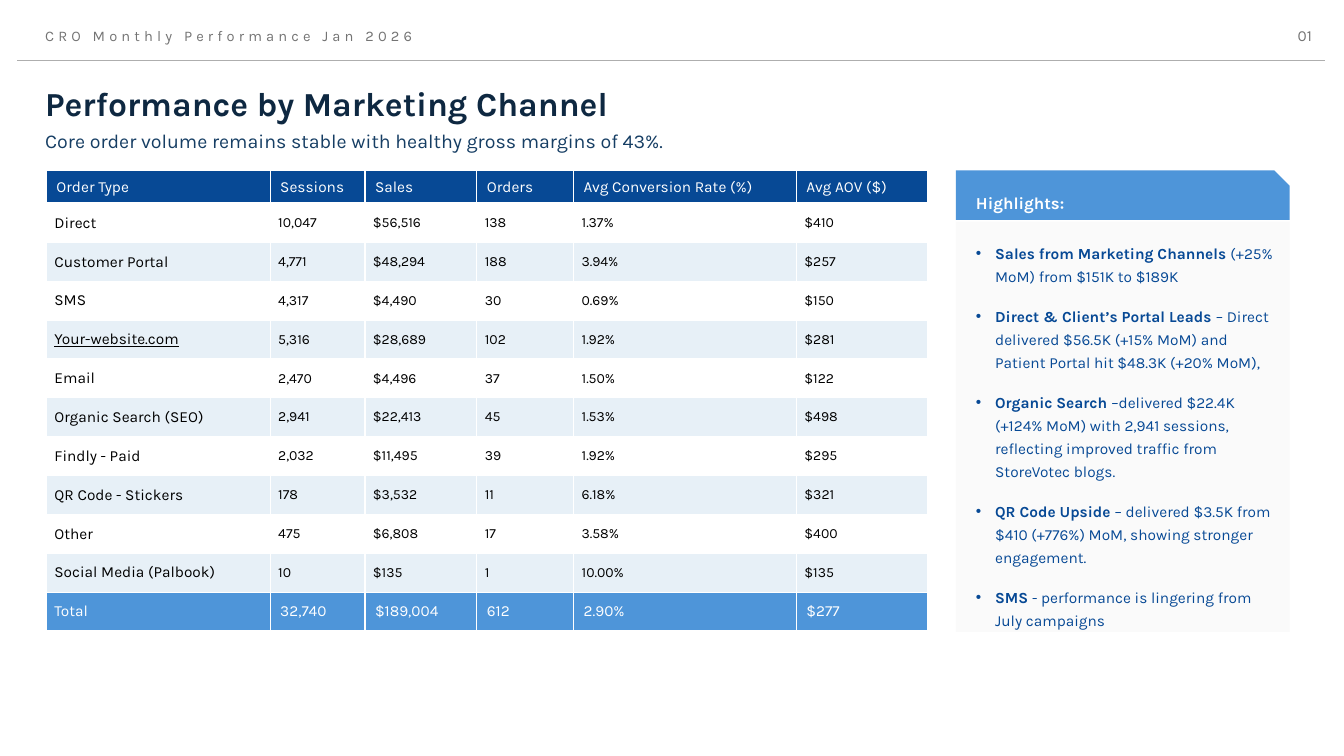
from lxml import etree
from pptx import Presentation
from pptx import util as u
from pptx.dml.color import RGBColor
from pptx.enum import shapes, text
from pptx.oxml.ns import qn

COLORS = {
    "white": "FFFFFF", "black": "000000", "navy": "0E2841", "slate": "163E64",
    "gray": "747474", "rule": "AEAEAE", "blue": "074995", "sky": "4E95D9",
    "band": "E7F0F7", "panel": "FAFAFA",
}

CHANNELS = [
    ("Order Type", "Sessions", "Sales", "Orders", "Avg Conversion Rate (%)", "Avg AOV ($)"),
    ("Direct", "10,047", "$56,516", "138", "1.37%", "$410"),
    ("Customer Portal", "4,771", "$48,294", "188", "3.94%", "$257"),
    ("SMS", "4,317", "$4,490", "30", "0.69%", "$150"),
    ("Your-website.com", "5,316", "$28,689", "102", "1.92%", "$281"),
    ("Email", "2,470", "$4,496", "37", "1.50%", "$122"),
    ("Organic Search (SEO)", "2,941", "$22,413", "45", "1.53%", "$498"),
    ("Findly - Paid", "2,032", "$11,495", "39", "1.92%", "$295"),
    ("QR Code - Stickers", "178", "$3,532", "11", "6.18%", "$321"),
    ("Other", "475", "$6,808", "17", "3.58%", "$400"),
    ("Social Media (Palbook)", "10", "$135", "1", "10.00%", "$135"),
    ("Total", "32,740", "$189,004", "612", "2.90%", "$277"),
]

HIGHLIGHTS = [
    ("Sales from Marketing Channels ", "(+25% MoM) from $151K to $189K"),
    ("Direct & Client’s Portal Leads ",
     "– Direct delivered $56.5K (+15% MoM) and Patient Portal hit $48.3K (+20% MoM),"),
    ("Organic Search ",
     "–delivered $22.4K (+124% MoM) with 2,941 sessions, "
     "reflecting improved traffic from StoreVotec blogs."),
    ("QR Code Upside ",
     "– delivered $3.5K from $410 (+776%) MoM, showing stronger engagement."),
    ("SMS", " - performance is lingering from July campaigns"),
]


def rgb(name):
    return RGBColor.from_string(COLORS[name])


class SlideBuilder:
    font = "Karla"

    def __init__(self, slide):
        self.slide = slide

    def run(self, paragraph, content, size, color, bold=False, underline=False, tracking=0):
        run = paragraph.add_run()
        run.text = content
        run.font.name = self.font
        run.font.size = u.Pt(size)
        run.font.bold = bold
        run.font.color.rgb = rgb(color)
        if underline:
            run.font.underline = True
        if tracking:
            run.font._element.set("spc", str(tracking * 100))

    def text_box(self, box, content, size, color, anchor=text.MSO_ANCHOR.BOTTOM,
                 align=text.PP_ALIGN.LEFT, spacing=0.9, **style):
        shape = self.slide.shapes.add_textbox(*map(u.Inches, box))
        frame = shape.text_frame
        frame.word_wrap = True
        frame.vertical_anchor = anchor
        paragraph = frame.paragraphs[0]
        paragraph.alignment = align
        paragraph.line_spacing = spacing
        self.run(paragraph, content, size, color, **style)

    def rule(self, start, end):
        line = self.slide.shapes.add_connector(
            shapes.MSO_CONNECTOR.STRAIGHT, *map(u.Inches, start + end))
        line.line.color.rgb = rgb("rule")
        line.line.width = u.Pt(0.75)
        etree.SubElement(line._element.spPr, qn("a:effectLst"))

    def panel(self, box, fill, snip, top_margin, paragraphs, size, color, bullets=False):
        shape = self.slide.shapes.add_shape(
            shapes.MSO_SHAPE.SNIP_1_RECTANGLE, *map(u.Inches, box))
        shape.adjustments[0] = snip
        shape.shadow.inherit = False
        shape.fill.solid()
        shape.fill.fore_color.rgb = rgb(fill)
        shape.line.fill.background()
        frame = shape.text_frame
        frame.word_wrap = True
        frame.vertical_anchor = text.MSO_ANCHOR.MIDDLE
        frame.margin_left, frame.margin_top = u.Inches(0.2), u.Inches(top_margin)
        frame.margin_right, frame.margin_bottom = u.Inches(0.12), u.Inches(0.05)
        for index, (strong, plain) in enumerate(paragraphs):
            paragraph = frame.add_paragraph() if index else frame.paragraphs[0]
            paragraph.alignment = text.PP_ALIGN.LEFT
            paragraph.line_spacing = 1.25
            paragraph.space_before = u.Pt(6 if index else 0)
            paragraph.space_after = u.Pt(6)
            if bullets:
                self.bullet(paragraph)
            self.run(paragraph, strong, size, color, bold=True)
            if plain:
                self.run(paragraph, plain, size, color)

    def bullet(self, paragraph):
        properties = paragraph._p.get_or_add_pPr()
        indent = u.Inches(0.19)
        properties.set("marL", str(indent))
        properties.set("indent", str(-indent))
        etree.SubElement(properties, qn("a:buFont"), typeface="Arial")
        etree.SubElement(properties, qn("a:buChar"), char="•")

    def borders(self, cell, bottom):
        properties = cell._tc.get_or_add_tcPr()
        widths = {"lnL": 1, "lnR": 1, "lnT": 1, "lnB": bottom}
        for index, (side, width) in enumerate(widths.items()):
            line = etree.Element(qn(f"a:{side}"), w=str(u.Pt(width)))
            fill = etree.SubElement(line, qn("a:solidFill"))
            etree.SubElement(fill, qn("a:srgbClr"), val=COLORS["white"])
            properties.insert(index, line)

    def table(self, box, widths, header_height, rows):
        left, top, width, height = box
        table = self.slide.shapes.add_table(
            len(rows), len(widths), *map(u.Inches, box)).table
        table.horz_banding = False
        for column, column_width in zip(table.columns, widths):
            column.width = u.Inches(column_width)
        body_height = (height - header_height) / (len(rows) - 1)
        last = len(rows) - 1
        for r, values in enumerate(rows):
            table.rows[r].height = u.Inches(body_height if r else header_height)
            header, total = r == 0, r == last
            fill = "blue" if header else "sky" if total else "white" if r % 2 else "band"
            for c, value in enumerate(values):
                cell = table.cell(r, c)
                cell.fill.solid()
                cell.fill.fore_color.rgb = rgb(fill)
                self.borders(cell, 3 if header else 1)
                cell.vertical_anchor = text.MSO_ANCHOR.MIDDLE
                if not header and not (total and c):
                    cell.margin_left = cell.margin_right = u.Inches(0.08)
                    cell.margin_top = cell.margin_bottom = u.Inches(0.02)
                self.run(cell.text_frame.paragraphs[0], value,
                         11 if header or total or c == 0 else 10,
                         "white" if header or total else "black",
                         underline=value == "Your-website.com")


def main():
    presentation = Presentation()
    presentation.slide_width = u.Inches(13.33)
    presentation.slide_height = u.Inches(7.5)
    builder = SlideBuilder(presentation.slides.add_slide(presentation.slide_layouts[6]))

    # Title and subtitle
    builder.text_box((0.35, 0.82, 5.8, 0.46), "Performance by Marketing Channel",
                     24, "navy", bold=True)
    builder.text_box((0.35, 1.23, 9.12, 0.34),
                     "Core order volume remains stable with healthy gross margins of 43%.",
                     14, "slate", anchor=text.MSO_ANCHOR.TOP, spacing=1.0)

    # Running header
    builder.rule((0.17, 0.6), (13.14, 0.6))
    builder.text_box((0.35, 0.22, 4.2, 0.27), "CRO Monthly Performance Jan 2026",
                     10.5, "gray", tracking=3)
    builder.text_box((12.7, 0.22, 0.41, 0.27), "01", 11, "gray",
                     align=text.PP_ALIGN.RIGHT)

    # Channel table
    builder.table((0.46, 1.69, 8.74, 4.57), (2.22, 0.94, 1.11, 0.96, 2.21, 1.3),
                  0.33, CHANNELS)

    # Highlights panel
    builder.panel((9.48, 1.69, 3.31, 0.49), "sky", 0.31, 0.08,
                  [("Highlights:", "")], 12, "white")
    builder.panel((9.48, 2.2, 3.31, 4.07), "panel", 0, 0.2,
                  HIGHLIGHTS, 11, "blue", bullets=True)

    presentation.save("out.pptx")


if __name__ == "__main__":
    main()
